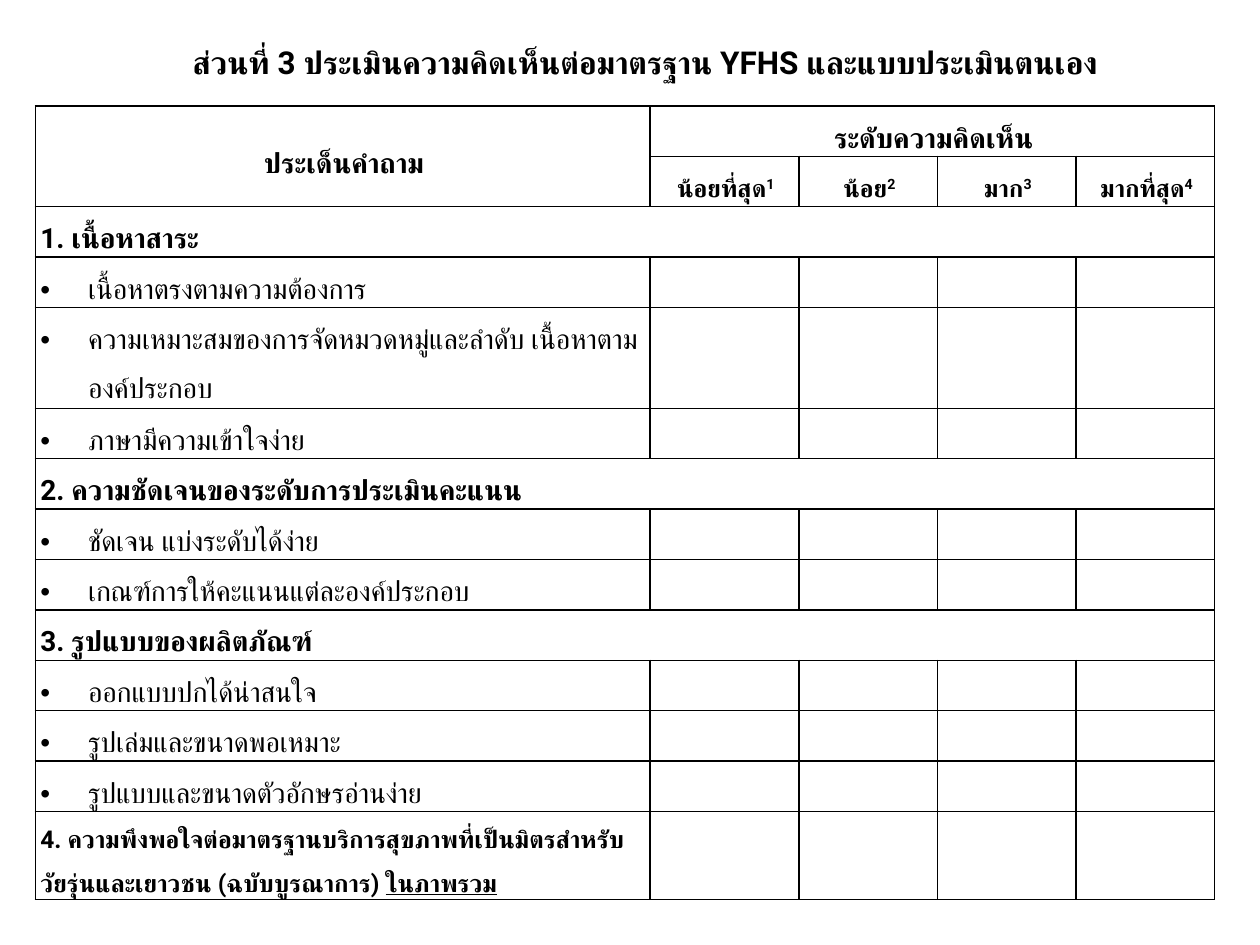
import dataclasses

import pptx
import pptx.dml.color
import pptx.enum.text
import pptx.oxml.ns
import pptx.util
from lxml import etree

ALIGN = pptx.enum.text.PP_ALIGN
ANCHOR = pptx.enum.text.MSO_ANCHOR


@dataclasses.dataclass
class Theme:
    font: str = "Roboto"
    ink: str = "000000"
    title: int = 18
    body: int = 16
    small: int = 14
    border: float = 1
    spacing: float = 1.5
    indent: float = 0.38


class Survey:
    def __init__(self, prs, theme):
        self.prs = prs
        self.theme = theme
        self.s = prs.slides.add_slide(prs.slide_layouts[5])

    def x(self, share):
        return int(self.prs.slide_width * share)

    def y(self, share):
        return int(self.prs.slide_height * share)

    def child(self, parent, tag, **attrs):
        return etree.SubElement(parent, pptx.oxml.ns.qn(tag), **attrs)

    def style(self, r, size, bold):
        r.font.name = self.theme.font
        r.font.size = pptx.util.Pt(size)
        r.font.bold = bold
        r.font.color.rgb = pptx.dml.color.RGBColor.from_string(self.theme.ink)
        self.child(r.font._element, "a:cs", typeface=self.theme.font)

    def title(self, text, left, top, width, height):
        sp = self.s.shapes.title
        sp.left, sp.top = self.x(left), self.y(top)
        sp.width, sp.height = self.x(width), self.y(height)
        tf = sp.text_frame
        tf.text = text
        tf.word_wrap = True
        tf.auto_size = pptx.enum.text.MSO_AUTO_SIZE.SHAPE_TO_FIT_TEXT
        tf.paragraphs[0].alignment = ALIGN.CENTER
        self.style(tf.paragraphs[0].runs[0], self.theme.title, True)

    def table(self, left, top, cols, rows):
        frame = self.s.shapes.add_table(len(rows), len(cols), self.x(left), self.y(top),
                                        self.x(sum(cols)), self.y(sum(rows)))
        tbl = frame.table
        tbl.first_row = tbl.horz_banding = False
        for column, share in zip(tbl.columns, cols):
            column.width = self.x(share)
        for row, share in zip(tbl.rows, rows):
            row.height = self.y(share)
        for cell in tbl.iter_cells():
            self.plain(cell)
        return tbl

    def plain(self, cell):
        cell.margin_left, cell.margin_right = pptx.util.Inches(0.04), pptx.util.Inches(0.02)
        cell.margin_top = cell.margin_bottom = 0
        tcPr = cell._tc.get_or_add_tcPr()
        for side in ("a:lnL", "a:lnR", "a:lnT", "a:lnB"):
            ln = self.child(tcPr, side, w=str(pptx.util.Pt(self.theme.border)))
            fill = self.child(ln, "a:solidFill")
            self.child(fill, "a:srgbClr", val=self.theme.ink)
        cell.fill.background()

    def label(self, cell, text, size, bold=True, align=ALIGN.LEFT):
        p = cell.text_frame.paragraphs[0]
        p.text = text
        p.alignment = align
        p.line_spacing = self.theme.spacing
        self.style(p.runs[0], size, bold)
        return p

    def header(self, cell, text, size, mark=""):
        cell.vertical_anchor = ANCHOR.MIDDLE
        p = self.label(cell, text, size, align=ALIGN.CENTER)
        if mark:
            self.extra(p, mark, size).font._element.set("baseline", "30000")

    def extra(self, p, text, size):
        r = p.add_run()
        r.text = text
        self.style(r, size, True)
        return r

    def bullet(self, cell, text):
        p = self.label(cell, text, self.theme.body, bold=False)
        pPr = p._p.get_or_add_pPr()
        indent = pptx.util.Inches(self.theme.indent)
        pPr.set("marL", str(indent))
        pPr.set("indent", str(-indent))
        self.child(pPr, "a:buFont", typeface="Arial")
        self.child(pPr, "a:buChar", char="•")


LEVELS = ["น้อยที่สุด", "น้อย", "มาก", "มากที่สุด"]
SECTIONS = [
    ("1. เนื้อหาสาระ", [
        "เนื้อหาตรงตามความต้องการ",
        "ความเหมาะสมของการจัดหมวดหมู่และลำดับ เนื้อหาตามองค์ประกอบ",
        "ภาษามีความเข้าใจง่าย"]),
    ("2. ความชัดเจนของระดับการประเมินคะแนน", [
        "ชัดเจน แบ่งระดับได้ง่าย",
        "เกณฑ์การให้คะแนนแต่ละองค์ประกอบ"]),
    ("3. รูปแบบของผลิตภัณฑ์", [
        "ออกแบบปกได้น่าสนใจ",
        "รูปเล่มและขนาดพอเหมาะ",
        "รูปแบบและขนาดตัวอักษรอ่านง่าย"]),
]
OVERALL = "4. ความพึงพอใจต่อมาตรฐานบริการสุขภาพที่เป็นมิตรสำหรับวัยรุ่นและเยาวชน (ฉบับบูรณาการ) "


def main():
    prs = pptx.Presentation()
    prs.slide_width, prs.slide_height = pptx.util.Inches(10), pptx.util.Inches(7.5)
    theme = Theme()
    survey = Survey(prs, theme)
    survey.title("ส่วนที่ 3 ประเมินความคิดเห็นต่อมาตรฐาน YFHS และแบบประเมินตนเอง",
                 0.067, 0.29 / 7.5, 0.89, 0.4 / 7.5)

    line = 0.4 / 7.5
    rows = [line] * 4 + [2 * line] + [line] * 8 + [0.7 / 7.5]
    tbl = survey.table(0.028, 0.84 / 7.5, [0.488, 0.118] + [0.11] * 3, rows)

    tbl.cell(0, 0).merge(tbl.cell(1, 0))
    tbl.cell(0, 1).merge(tbl.cell(0, 4))
    survey.header(tbl.cell(0, 0), "ประเด็นคำถาม", theme.body)
    survey.header(tbl.cell(0, 1), "ระดับความคิดเห็น", theme.body)
    for score, level in enumerate(LEVELS, 1):
        survey.header(tbl.cell(1, score), level, theme.small, str(score))

    row = 2
    for heading, questions in SECTIONS:
        tbl.cell(row, 0).merge(tbl.cell(row, 4))
        survey.label(tbl.cell(row, 0), heading, theme.body)
        for row, question in enumerate(questions, row + 1):
            survey.bullet(tbl.cell(row, 0), question)
        row += 1

    p = survey.label(tbl.cell(row, 0), OVERALL, theme.small)
    survey.extra(p, "ในภาพรวม", theme.small).font.underline = True
    prs.save("out.pptx")


if __name__ == "__main__":
    main()
